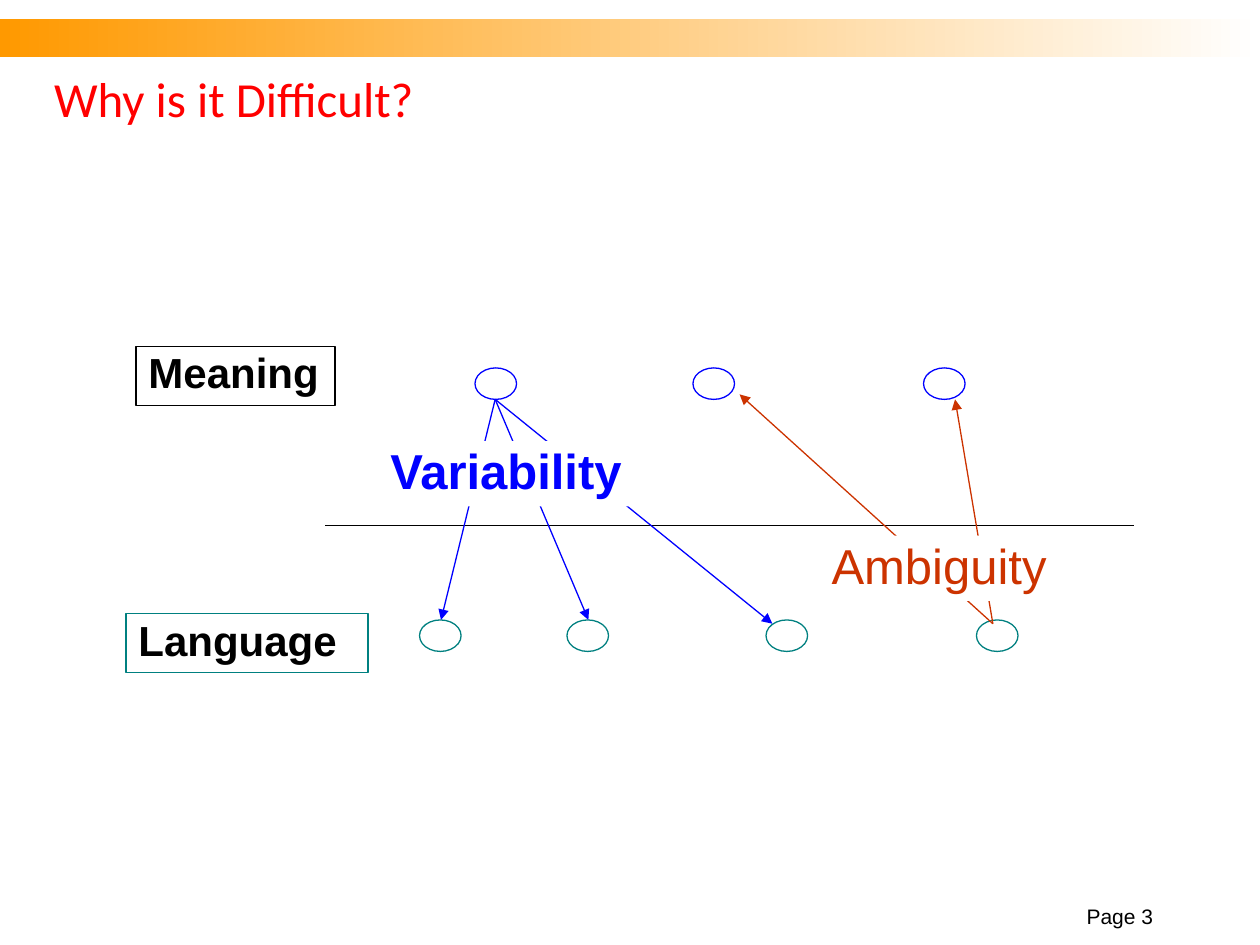
from dataclasses import dataclass

from lxml import etree
from pptx import Presentation
from pptx.dml.color import RGBColor
from pptx.enum.shapes import MSO_CONNECTOR, MSO_SHAPE
from pptx.enum.text import MSO_ANCHOR, PP_ALIGN
from pptx.oxml.ns import qn
from pptx.util import Inches, Pt

STRAIGHT = MSO_CONNECTOR.STRAIGHT
RECTANGLE, OVAL = MSO_SHAPE.RECTANGLE, MSO_SHAPE.OVAL
LEFT, RIGHT = PP_ALIGN.LEFT, PP_ALIGN.RIGHT
TOP, MIDDLE, BOTTOM = MSO_ANCHOR.TOP, MSO_ANCHOR.MIDDLE, MSO_ANCHOR.BOTTOM

COLORS = {
    "title": "FF0000",
    "bar": "FF9900",
    "white": "FFFFFF",
    "black": "000000",
    "meaning": "0000FF",
    "language": "008080",
    "ambiguity": "CC3300",
}
NODE_WIDTH, NODE_HEIGHT = 0.33, 0.25
LINE_WIDTH = 0.75


@dataclass
class Label:
    text: str
    left: float
    top: float
    width: float
    height: float
    size: int
    color: str = "black"
    bold: bool = True
    fill: str | None = None
    border: str | None = None
    side_inset: float = 0.1
    wrap: bool = True


@dataclass
class NodeRow:
    top: float
    color: str
    lefts: tuple[float, ...]


@dataclass
class Relation:
    label: Label
    start: tuple[float, float]
    ends: tuple[tuple[float, float], ...]


def rgb(name: str) -> RGBColor:
    return RGBColor.from_string(COLORS[name])


def write(shape, text: str, size: int, color: str, font_name: str = "Arial",
          bold: bool = False, align=LEFT, anchor=TOP):
    shape.text_frame.text = text
    shape.text_frame.vertical_anchor = anchor
    paragraph = shape.text_frame.paragraphs[0]
    paragraph.alignment = align
    paragraph.font.name = font_name
    paragraph.font.size = Pt(size)
    paragraph.font.bold = bold
    paragraph.font.color.rgb = rgb(color)
    return paragraph


def add_outlined(shapes, preset, left: float, top: float, width: float,
                 height: float, border: str | None, fill: str | None = None):
    shape = shapes.add_shape(preset, Inches(left), Inches(top),
                             Inches(width), Inches(height))
    shape.shadow.inherit = False
    if fill:
        shape.fill.solid()
        shape.fill.fore_color.rgb = rgb(fill)
    else:
        shape.fill.background()
    if border:
        shape.line.color.rgb = rgb(border)
        shape.line.width = Pt(LINE_WIDTH)
    else:
        shape.line.fill.background()
    return shape


def add_label(shapes, label: Label) -> None:
    box = add_outlined(shapes, RECTANGLE, label.left, label.top, label.width,
                       label.height, label.border, label.fill)
    frame = box.text_frame
    frame.word_wrap = label.wrap
    frame.margin_left = frame.margin_right = Inches(label.side_inset)
    paragraph = write(box, label.text, label.size, label.color, bold=label.bold)
    paragraph.line_spacing = 0.9


def add_line(shapes, start: tuple[float, float], end: tuple[float, float],
             color: str, arrow: bool = False) -> None:
    line = shapes.add_connector(STRAIGHT, *map(Inches, start + end))
    line.line.color.rgb = rgb(color)
    line.line.width = Pt(LINE_WIDTH)
    if arrow:
        outline = line.line._get_or_add_ln()
        etree.SubElement(outline, qn("a:tailEnd"), type="triangle")
    etree.SubElement(line._element.spPr, qn("a:effectLst"))


def add_relation(shapes, relation: Relation) -> None:
    group = shapes.add_group_shape().shapes
    for end in relation.ends:
        add_line(group, relation.start, end, relation.label.color, arrow=True)
    add_label(group, relation.label)


def add_bar(shapes) -> None:
    bar = add_outlined(shapes, RECTANGLE, 0, 0.15, 10, 0.3, None)
    bar.fill.gradient()
    bar.fill.gradient_angle = 0
    for stop, color in zip(bar.fill.gradient_stops, ("bar", "white")):
        stop.color.rgb = rgb(color)


def add_title(title) -> None:
    title.left, title.top = Inches(0.33), Inches(0.39)
    title.width, title.height = Inches(8.87), Inches(0.78)
    write(title, "Why is it Difficult?", 28, "title", "Calibri", anchor=MIDDLE)


def add_page_number(shapes) -> None:
    page = shapes.add_textbox(Inches(8.25), Inches(7.17), Inches(1), Inches(0.25))
    page.text_frame.word_wrap = True
    write(page, "Page 3", 12, "black", align=RIGHT, anchor=BOTTOM)


LEVELS = (
    Label("Meaning", 1.08, 2.75, 1.58, 0.47, 24, border="black"),
    Label("Language", 1, 4.87, 1.92, 0.47, 24, border="language"),
)
NODE_ROWS = (
    NodeRow(2.92, "meaning", (3.77, 5.5, 7.33)),
    NodeRow(4.92, "language", (3.33, 4.5, 6.08, 7.75)),
)
RELATIONS = (
    Relation(Label("Ambiguity", 6.6, 4.25, 1.71, 0.52, 28, "ambiguity",
                   bold=False, fill="white", side_inset=0, wrap=False),
             (7.88, 4.95), ((5.87, 3.13), (7.58, 3.17))),
    Relation(Label("Variability", 3, 3.5, 2.75, 0.52, 28, "meaning", fill="white"),
             (3.93, 3.17), ((4.67, 4.92), (3.5, 4.92), (6.13, 4.95))),
)


def main() -> None:
    deck = Presentation()
    deck.slide_width, deck.slide_height = Inches(10), Inches(7.5)
    slide = deck.slides.add_slide(deck.slide_layouts[5])
    shapes = slide.shapes
    add_bar(shapes)
    add_title(shapes.title)
    add_line(shapes, (2.58, 4.17), (9, 4.17), "black")
    for level in LEVELS:
        add_label(shapes, level)
    for row in NODE_ROWS:
        for left in row.lefts:
            add_outlined(shapes, OVAL, left, row.top, NODE_WIDTH, NODE_HEIGHT, row.color)
    for relation in RELATIONS:
        add_relation(shapes, relation)
    add_page_number(shapes)
    deck.save("out.pptx")


if __name__ == "__main__":
    main()
